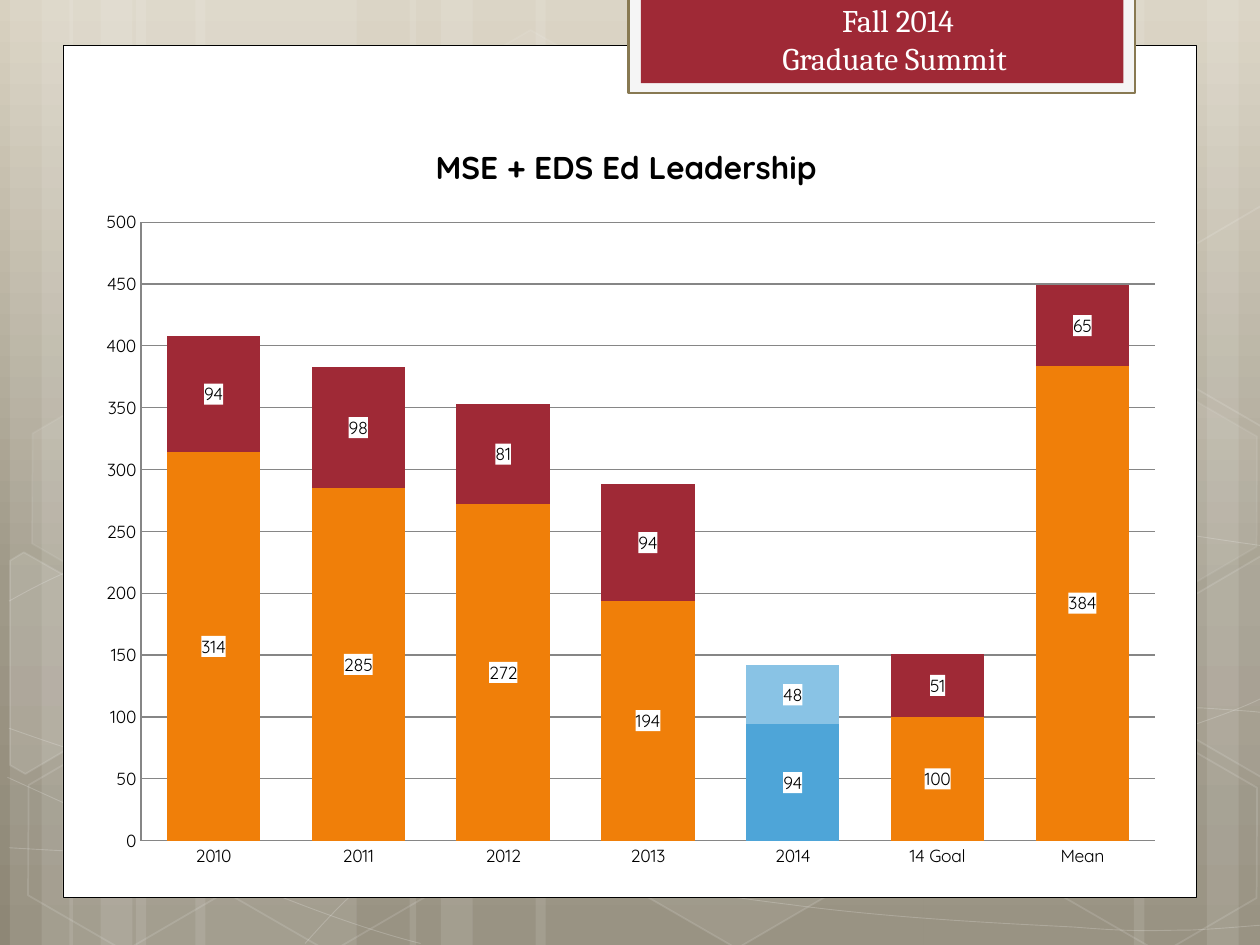
import math
from copy import deepcopy

from lxml import etree
from pptx import Presentation
from pptx import util as u
from pptx.chart.data import CategoryChartData
from pptx.dml.color import RGBColor
from pptx.enum import chart as charts, shapes, text
from pptx.oxml.ns import qn

WHITE = RGBColor(0xFF, 0xFF, 0xFF)
BLACK = RGBColor(0, 0, 0)
GREY = RGBColor(0x86, 0x86, 0x86)
PALE = RGBColor(0xF5, 0xF5, 0xF5)
TAN = RGBColor(0x88, 0x79, 0x52)
RED = RGBColor(0x9F, 0x29, 0x36)
ORANGE = RGBColor(0xF0, 0x7F, 0x09)
BLUE = RGBColor(0x4E, 0xA5, 0xD8)
LIGHT_BLUE = RGBColor(0x89, 0xC3, 0xE5)
BACKDROP = [(0, RGBColor(0xD8, 0xD1, 0xC0)), (0.62, RGBColor(0x9F, 0x99, 0x88)),
            (1, RGBColor(0x8E, 0x87, 0x76))]

WIDTH, HEIGHT = 25.4, 19.05
TILT = 30
BANNER_LINES = ["Fall 2014", "Graduate Summit "]
TITLE = "MSE + EDS Ed Leadership "
CATEGORIES = ["2010", "2011", "2012", "2013", "2014", "14 Goal", "Mean"]
SERIES = [
    ("Series 1", [314, 285, 272, 194, 94, 100, 384], ORANGE, BLUE),
    ("Series 2", [94, 98, 81, 94, 48, 51, 65], RED, LIGHT_BLUE),
]
HIGHLIGHT = CATEGORIES.index("2014")

STRIPES = [(2.74, 4.45), (0.2, 1.27), (0.84, 2.11), (3.94, 4.45), (1.4, 1.27), (2.03, 2.11),
           (18.62, 4.45), (24.33, 1.27), (22.86, 2.11), (10.8, 7.82), (8.26, 1.27), (8.89, 2.11)]
CURVES = [
    [(0.18, 17.09), (1.55, 17.17), (2.92, 17.25), (4.83, 17.22), (6.73, 17.2), (9.09, 17.15),
     (11.63, 16.89), (14.17, 16.64), (17.78, 16.15), (20.12, 15.67), (22.43, 15.19),
     (24.82, 14.43), (25.58, 14)],
    [(0.18, 12.12), (0.91, 11.71), (1.65, 11.33), (3.07, 10.95), (4.52, 10.57), (6.58, 10.01),
     (8.81, 9.83), (11.07, 9.65), (13.82, 9.63), (16.61, 9.83), (19.41, 10.03),
     (24.05, 10.82), (25.58, 11.02)],
    [(0.15, 15.67), (3.23, 17.07), (6.27, 18.47), (8.48, 19.02)],
    [(0.18, 14.68), (0.97, 14.96), (1.78, 15.24), (3.25, 15.65), (4.72, 16.03), (6.93, 16.66),
     (9.07, 17.09), (11.18, 17.53), (13.84, 17.98), (15.95, 18.24), (18.06, 18.52),
     (20.32, 18.62), (21.67, 18.69), (22.99, 18.8), (23.34, 18.75), (24, 18.75),
     (24.66, 18.72), (25.12, 18.67), (25.58, 18.64)],
    [(6.15, 19.02), (6.6, 18.52), (7.06, 18.01), (7.67, 17.55), (8.28, 17.09), (9.14, 16.59),
     (9.86, 16.23), (10.57, 15.88), (11, 15.72), (11.94, 15.47), (12.85, 15.21),
     (14.55, 14.86), (15.44, 14.68), (16.36, 14.5), (16.48, 14.5), (17.27, 14.45),
     (18.06, 14.38), (19.3, 14.3), (20.17, 14.27), (21.06, 14.25), (22.5, 14.27),
     (22.5, 14.27), (23.07, 14.27), (23.64, 14.27), (24.21, 14.27), (24.66, 14.3),
     (25.1, 14.33), (25.32, 14.35), (25.55, 14.38), (25.48, 14.35), (25.55, 14.38)],
]
HEXAGONS = [(8.48, 0.91, 4, 8), (12.62, 14.96, 6, 12), (0.28, 15.01, 0, 12), (0.36, 7.92, 7, 8),
            (4.42, 15.04, 0, 12), (19.13, 11.51, 10, 12), (21.18, 15.06, 0, 12),
            (21.18, 7.98, 7, 8)]
CUT_HEXAGONS = [
    ((0.91, 13.59), [(0.2, 11.3), (0.48, 11.13), (2.44, 12.24), (2.41, 14.48), (0.51, 15.6),
                     (0.2, 15.42)], 10),
    ((25.02, 13.21), [(23.52, 12.32), (25.43, 11.2), (25.63, 11.33), (25.63, 15.57),
                      (25.45, 15.67), (23.52, 14.55)], 4),
    ((25.02, 6.12), [(23.52, 5.26), (25.43, 4.14), (25.65, 4.27), (25.63, 8.51),
                     (25.45, 8.61), (23.52, 7.49)], 0),
]
PANELS = [
    ((1.27, 0.91, 22.86, 17.19), WHITE, BLACK, 0.5),
    ((12.67, -0.05, 10.21, 1.93), PALE, TAN, 1.25),
    ((12.92, -0.05, 9.73, 1.73), RED, None, 0),
]


def paint(shape, fill=None, fill_alpha=100, line=None, width=1, line_alpha=100):
    shape.shadow.inherit = False
    for part, color in ((shape.fill, fill), (shape.line.fill, line)):
        if color is None:
            part.background()
        else:
            part.solid()
            part.fore_color.rgb = color
    if line is not None:
        shape.line.width = u.Pt(width)
    properties = shape._element.spPr
    for trail, alpha in (("a:solidFill", fill_alpha), ("a:ln/a:solidFill", line_alpha)):
        solid = properties.find("/".join(qn(tag) for tag in trail.split("/")))
        if solid is not None and alpha < 100:
            etree.SubElement(solid[0], qn("a:alpha"), val=str(alpha * 1000))


def add_preset(page, kind, frame):
    return page.shapes.add_shape(kind, *map(u.Cm, frame))


def add_outline(page, points, close):
    points = [(u.Cm(x), u.Cm(y)) for x, y in points]
    builder = page.shapes.build_freeform(*points[0])
    builder.add_line_segments(points[1:], close=close)
    return builder.convert_to_shape()


def add_curve(page, points):
    curve = add_outline(page, points, False)
    segments = list(curve._element.iter(qn("a:lnTo")))
    for start in range(0, len(segments), 3):
        group = segments[start:start + 3]
        bezier = etree.Element(qn("a:cubicBezTo"))
        group[0].addprevious(bezier)
        for segment in group:
            bezier.append(segment[0])
            segment.getparent().remove(segment)
    return curve


def turn_back(points, center):
    cosine, sine = math.cos(math.radians(TILT)), math.sin(math.radians(TILT))
    middle_x, middle_y = center
    return [(middle_x + (x - middle_x) * cosine + (y - middle_y) * sine,
             middle_y - (x - middle_x) * sine + (y - middle_y) * cosine) for x, y in points]


def format_font(font, size=10, color=BLACK, name="Quicksand", bold=False):
    font.size, font.name, font.bold = u.Pt(size), name, bold
    font.color.rgb = color


def add_text(para, words, align=text.PP_ALIGN.CENTER, **style):
    para.alignment = align
    span = para.add_run()
    span.text = words
    format_font(span.font, **style)


def add_backdrop(page):
    fill = page.background.fill
    fill.gradient()
    fill.gradient_angle = 270
    last = page.background._cSld.find(".//" + qn("a:gsLst"))[-1]
    last.addnext(deepcopy(last))
    for stop, (position, color) in zip(fill.gradient_stops, BACKDROP):
        stop.position = position
        stop.color.rgb = color
    for left, width in STRIPES:
        stripe = add_preset(page, shapes.MSO_SHAPE.RECTANGLE, (left, 0, width, HEIGHT))
        paint(stripe, WHITE, 10)
    for points in CURVES:
        paint(add_curve(page, points), line=WHITE, width=0.5, line_alpha=20)
    for left, top, alpha, line_alpha in HEXAGONS:
        hexagon = add_preset(page, shapes.MSO_SHAPE.HEXAGON, (left, top, 4.45, 3.86))
        hexagon.adjustments[0] = 0.285
        hexagon.rotation = TILT
        paint(hexagon, WHITE if alpha else None, alpha, WHITE, 1, line_alpha)
    for center, points, alpha in CUT_HEXAGONS:
        hexagon = add_outline(page, turn_back(points, center), True)
        hexagon.rotation = TILT
        paint(hexagon, WHITE if alpha else None, alpha, WHITE, 1, 12)


def add_banner(page):
    for frame, fill, line, width in PANELS:
        panel = add_preset(page, shapes.MSO_SHAPE.RECTANGLE, frame)
        paint(panel, fill, line=line, width=width)
    box = page.shapes.add_textbox(*map(u.Cm, (13.34, -0.1, 9.53, 1.8)))
    box.text_frame.word_wrap = True
    for index, words in enumerate(BANNER_LINES):
        para = box.text_frame.add_paragraph() if index else box.text_frame.paragraphs[0]
        add_text(para, words, size=18, color=WHITE, name="Cambria")


def add_enrollment_chart(page):
    data = CategoryChartData()
    data.categories = CATEGORIES
    for name, values, _, _ in SERIES:
        data.add_series(name, values)
    chart = page.shapes.add_chart(charts.XL_CHART_TYPE.COLUMN_STACKED,
                                  *map(u.Cm, (1.7, 2.34, 22.02, 15.44)), data).chart
    format_font(chart.font)
    chart.has_legend = False
    add_text(chart.chart_title.text_frame.paragraphs[0], TITLE, size=18, bold=True)
    chart.chart_title.include_in_layout = False
    scale = chart.value_axis
    for axis in (chart.category_axis, scale):
        axis.major_tick_mark = axis.minor_tick_mark = charts.XL_TICK_MARK.NONE
        axis.format.line.color.rgb = GREY
        format_font(axis.tick_labels.font)
    scale.major_gridlines.format.line.color.rgb = GREY
    plot = chart.plots[0]
    plot.gap_width, plot.overlap, plot.vary_by_categories = 55, 100, False
    for series, (_, _, color, accent) in zip(plot.series, SERIES):
        for part, shade in ((series, color), (series.points[HIGHLIGHT], accent)):
            part.format.fill.solid()
            part.format.fill.fore_color.rgb = shade
        labels = series.data_labels
        labels.show_value = True
        labels.position = charts.XL_LABEL_POSITION.CENTER
        format_font(labels.font)
        patch = etree.Element(qn("c:spPr"))
        solid = etree.SubElement(patch, qn("a:solidFill"))
        etree.SubElement(solid, qn("a:srgbClr"), val=str(WHITE))
        labels._element.find(qn("c:txPr")).addprevious(patch)


def main():
    deck = Presentation()
    deck.slide_width, deck.slide_height = u.Cm(WIDTH), u.Cm(HEIGHT)
    page = deck.slides.add_slide(deck.slide_layouts[6])
    add_backdrop(page)
    add_banner(page)
    add_enrollment_chart(page)
    deck.save("out.pptx")


if __name__ == "__main__":
    main()
